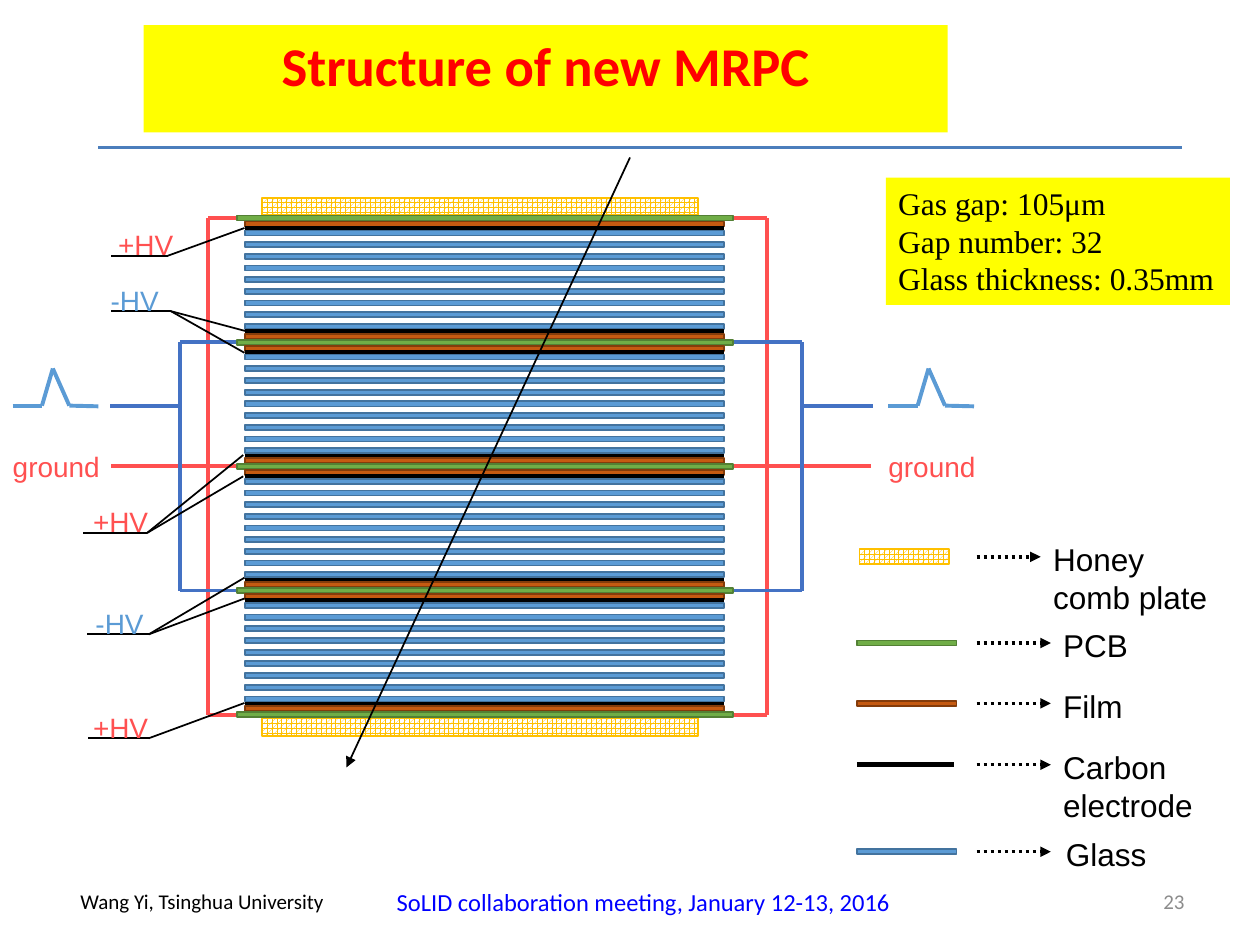
from lxml.etree import SubElement
from pptx import Presentation
from pptx.dml.color import RGBColor
from pptx.enum.dml import MSO_LINE, MSO_PATTERN
from pptx.enum.shapes import MSO_CONNECTOR, MSO_SHAPE
from pptx.enum.text import MSO_ANCHOR, PP_ALIGN
from pptx.oxml.ns import qn
from pptx.util import Pt

RED, BLUE, SKY, BLACK, YELLOW = "FF5050", "4472C4", "5B9BD5", "000000", "FFFF00"
GOLD, WHITE = "FFC000", "FFFFFF"
MATERIALS = {"pcb": ("70AD47", "538035"), "film": ("C55A11", "843C0B"), "glass": (SKY, "43739E")}
LABEL = {"name": "Arial", "size": Pt(16)}
LEGEND = {"name": "Arial", "size": Pt(18)}
PCB_PITCH, GLASS_PITCH = 70.95, 6.68
THICKNESS = 2.9


def rgb(colour):
    """Turn a hex string into a colour."""
    return RGBColor.from_string(colour)


def apply_format(target, values):
    """Set every attribute named in a dict."""
    for name, value in values.items():
        setattr(target, name, value)


def add_rectangle(slide, left, top, width, height, fill, outline=None):
    """Add a flat rectangle."""
    shape = slide.shapes.add_shape(MSO_SHAPE.RECTANGLE, Pt(left), Pt(top), Pt(width), Pt(height))
    shape.shadow.inherit = False
    shape.fill.solid()
    shape.fill.fore_color.rgb = rgb(fill)
    if outline:
        shape.line.color.rgb = rgb(outline)
        shape.line.width = Pt(1)
    else:
        shape.line.fill.background()
    return shape


def add_honeycomb(slide, left, top, width, height):
    """Add a patterned honeycomb plate."""
    fill = add_rectangle(slide, left, top, width, height, WHITE, GOLD).fill
    fill.patterned()
    fill.pattern = MSO_PATTERN.SPHERE
    fill.fore_color.rgb = rgb(GOLD)
    fill.back_color.rgb = rgb(WHITE)


def add_path(slide, points, colour, width, arrow=False, dash=None):
    """Join successive points with straight connectors."""
    for start, end in zip(points, points[1:]):
        connector = slide.shapes.add_connector(
            MSO_CONNECTOR.STRAIGHT, *(Pt(value) for value in (*start, *end)))
        connector.line.color.rgb = rgb(colour)
        connector.line.width = Pt(width)
        if dash:
            connector.line.dash_style = dash
        if arrow:
            SubElement(connector.line._get_or_add_ln(), qn("a:tailEnd"), type="triangle")
        SubElement(connector._element.spPr, qn("a:effectLst"))


def write_text(shape, lines, font, colour, align=PP_ALIGN.LEFT, **frame_format):
    """Write one paragraph per line into a shape."""
    frame = shape.text_frame
    apply_format(frame, {"word_wrap": True, "vertical_anchor": MSO_ANCHOR.TOP, **frame_format})
    for index, line in enumerate(lines):
        paragraph = frame.add_paragraph() if index else frame.paragraphs[0]
        paragraph.text = line
        paragraph.alignment = align
        apply_format(paragraph.font, font)
        paragraph.font.color.rgb = rgb(colour)


def add_text(slide, left, top, width, height, text, font, colour, **options):
    """Add a text box holding one paragraph."""
    box = slide.shapes.add_textbox(Pt(left), Pt(top), Pt(width), Pt(height))
    write_text(box, [text], font, colour, **options)


def draw_footer(slide, left, top):
    """Place the meeting, the author and the page number."""
    small = {"name": "Calibri", "size": Pt(12)}
    add_text(slide, left + 180.7, top, 410.4, 39.6, "SoLID collaboration meeting, January 12-13, 2016",
             {"name": "Calibri", "size": Pt(14)}, "0000FF")
    add_text(slide, left, top + 0.7, 154.8, 21.6, "Wang Yi, Tsinghua University", small, BLACK,
             word_wrap=False)
    add_text(slide, left + 477.3, top - 2.9, 167.8, 28.8, "23", small, "8C8C8C",
             align=PP_ALIGN.RIGHT, vertical_anchor=MSO_ANCHOR.MIDDLE)


def draw_header(slide, left, top):
    """Place the title banner, its rule and the gap facts."""
    add_path(slide, [(left - 25.9, top + 69.9), (left + 593.3, top + 69.9)], "4B7EBC", 2)
    banner = add_rectangle(slide, left, top, 459.4, 61.2, YELLOW)
    write_text(banner, ["Structure of new MRPC"],
               {"name": "Calibri", "size": Pt(31.2), "bold": True}, "FF0000", PP_ALIGN.CENTER)
    facts = add_rectangle(slide, left + 424.1, top + 87.1, 196.6, 72.7, YELLOW)
    write_text(facts, ["Gas gap: 105μm", "Gap number: 32", "Glass thickness: 0.35mm"],
               {"name": "Times New Roman", "size": Pt(18)}, BLACK, word_wrap=False)


def draw_wires(slide, left, top, width):
    """Draw the ground and readout wires on both sides of the stack."""
    right = left + width
    circuits = [(RED, 0, 4, 141.9, ((left, left - 16.6, left, 63.4), (right, right + 19.2, right, 497.5))),
                (BLUE, 1, 3, 107.3, ((left, left - 32.4, left - 32.4, 62.6),
                                     (right, right + 39, right + 39, 499)))]
    for colour, first, last, tap, sides in circuits:
        upper, lower = (top + index * PCB_PITCH for index in (first, last))
        for edge, rail, tap_start, tap_end in sides:
            add_path(slide, [(edge, upper), (rail, upper), (rail, lower), (edge, lower)], colour, 2.25)
            add_path(slide, [(tap_start, top + tap), (tap_end, top + tap)], colour, 2.25)


def draw_stack(slide, left, top, width):
    """Draw four glass chambers between five circuit boards and two plates."""
    inner_left, inner_width = left + 4.4, width - 9.9

    def add_layer(material, layer_top):
        """Add one thin layer of a material."""
        add_rectangle(slide, inner_left, layer_top, inner_width, THICKNESS, *MATERIALS[material])

    def add_carbon(level):
        """Add one carbon electrode."""
        add_path(slide, [(inner_left, level), (inner_left + inner_width, level)], BLACK, 3)

    for plate_top in (top - 10.2, top + 4 * PCB_PITCH + 3.5):
        add_honeycomb(slide, left + 14.4, plate_top, 249.1, 10.1)
    for index in range(5):
        board = top + index * PCB_PITCH
        if index > 0:
            add_carbon(board - 4.4)
            add_layer("film", board - 3.4)
        add_rectangle(slide, left, board, width, THICKNESS, *MATERIALS["pcb"])
        if index < 4:
            add_layer("film", board + 3.4)
            add_carbon(board + 7.3)
            for pane in range(9):
                add_layer("glass", board + 8.5 + pane * GLASS_PITCH)


def draw_pulse(slide, left, top):
    """Draw a signal pulse and the ground label below it."""
    outline = [(0, 0), (16.8, 0), (23, -21.2), (32.4, 0), (49, 0.4)]
    add_path(slide, [(left + x, top + y) for x, y in outline], SKY, 2.25)
    add_text(slide, left - 7, top + 21.8, 68, 27, "ground", LABEL, RED, word_wrap=False)


def draw_voltage(slide, left, top, text, colour, tail, text_left, leads):
    """Draw a voltage label with leads fanning out from its knee."""
    add_path(slide, [(left, top), (left - tail, top)], BLACK, 1)
    for x, y in leads:
        add_path(slide, [(left, top), (left + x, top + y)], BLACK, 1)
    add_text(slide, left + text_left, top - 19.6, 52, 27, text, LABEL, colour, word_wrap=False)


def draw_legend(slide, left, top):
    """Draw the material samples with arrows to their names."""
    rows = [("honeycomb", 0, 594.7, "Honey comb plate", 113.8),
            ("pcb", 49.2, 600.5, "PCB", 100),
            ("film", 83.7, 600.5, "Film", 100),
            ("carbon", 118.8, 600.5, "Carbon electrode", 100),
            ("glass", 168.5, 602, "Glass", 100)]
    for material, offset, text_left, text, text_width in rows:
        level = top + offset
        if material == "honeycomb":
            add_honeycomb(slide, left + 1.5, level - 4.3, 51.1, 8.6)
        elif material == "carbon":
            add_path(slide, [(left, level), (left + 55.4, level)], BLACK, 3)
        else:
            add_rectangle(slide, left, level - 1.4, 57, THICKNESS, *MATERIALS[material])
        add_path(slide, [(558, level), (min(text_left, 600.5), level)], BLACK, 2, True,
                 MSO_LINE.ROUND_DOT)
        add_text(slide, text_left, level - 13, text_width, 27, text, LEGEND, BLACK)


def main():
    """Build the slide."""
    presentation = Presentation()
    presentation.slide_width, presentation.slide_height = Pt(720), Pt(540)
    slide = presentation.slides.add_slide(presentation.slide_layouts[6])
    draw_footer(slide, 38.9, 503.3)
    draw_wires(slide, 135.4, 124.6, 283.7)
    draw_stack(slide, 135.4, 123.2, 283.7)
    add_path(slide, [(360, 90), (198, 438.5)], BLACK, 1, True)
    for left in (7.2, 507.6):
        draw_pulse(slide, left, 231.8)
    voltages = [(95.8, 146.2, "+HV", RED, 32.4, -35.3, [(43.9, -15.9)]),
                (97.6, 177.8, "-HV", SKY, 34.2, -41.4, [(43.2, 11.5), (42.1, 23.8)]),
                (84, 304.6, "+HV", RED, 36.5, -37.9, [(55, -44.6), (55, -32.4)]),
                (85, 362.5, "-HV", SKY, 35.3, -37.5, [(54.7, -32.4), (54.7, -20.5)]),
                (85, 421.9, "+HV", RED, 34.6, -38.9, [(54.7, -20.2)])]
    for voltage in voltages:
        draw_voltage(slide, *voltage)
    draw_header(slide, 82.1, 14.4)
    draw_legend(slide, 489.6, 318.2)
    presentation.save("out.pptx")


if __name__ == "__main__":
    main()
